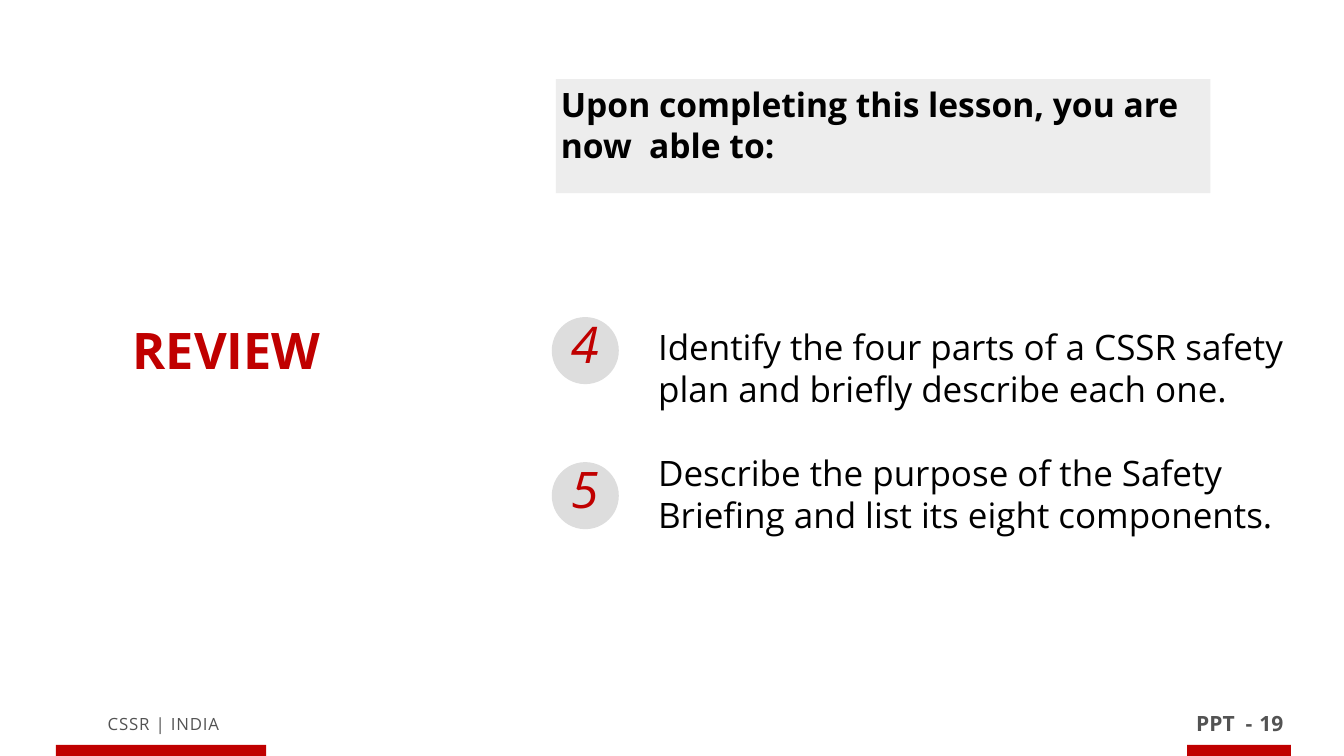
from pptx import Presentation
from pptx.dml.color import RGBColor
from pptx.enum.shapes import MSO_SHAPE
from pptx.enum.text import MSO_ANCHOR, MSO_AUTO_SIZE, PP_ALIGN
from pptx.util import Cm, Pt

RECTANGLE, OVAL = MSO_SHAPE.RECTANGLE, MSO_SHAPE.OVAL
LEFT, CENTER = PP_ALIGN.LEFT, PP_ALIGN.CENTER
TOP = MSO_ANCHOR.TOP
FIT_SHAPE = MSO_AUTO_SIZE.SHAPE_TO_FIT_TEXT

RED = RGBColor(0xC0, 0x00, 0x00)
BLACK = RGBColor(0x00, 0x00, 0x00)
FOOTER_GRAY = RGBColor(0x53, 0x53, 0x53)
CIRCLE_GRAY = RGBColor(0xDD, 0xDD, 0xDD)
BANNER_GRAY = RGBColor(0xED, 0xED, 0xED)
FONT = "Open Sans"

presentation = Presentation()
presentation.slide_width = Cm(67.74)
presentation.slide_height = Cm(38.1)
slide = presentation.slides.add_slide(presentation.slide_layouts[6])


def add_block(shapes, kind, left, top, width, height, fill):
    shape = shapes.add_shape(kind, Cm(left), Cm(top), Cm(width), Cm(height))
    shape.shadow.inherit = False
    shape.fill.solid()
    shape.fill.fore_color.rgb = fill
    shape.line.fill.background()
    return shape


def write(shape, texts, size, color, bold=False, italic=False,
          align=LEFT, wrap=True, gap=0, inset=0.23):
    frame = shape.text_frame
    frame.word_wrap = wrap
    if not wrap:
        frame.auto_size = FIT_SHAPE
    frame.vertical_anchor = TOP
    frame.margin_left = frame.margin_right = Cm(inset)
    frame.margin_top = frame.margin_bottom = Cm(inset)
    for index, text in enumerate(texts):
        paragraph = frame.add_paragraph() if index else frame.paragraphs[0]
        paragraph.alignment = align
        if index:
            paragraph.space_before = Pt(gap)
        run = paragraph.add_run()
        run.text = text
        font = run.font
        font.name, font.size = FONT, Pt(size)
        font.bold, font.italic = bold, italic
        font.color.rgb = color


# Footer: labels, page number and red bars
footer = slide.shapes.add_textbox(Cm(1.79), Cm(35.76), Cm(12.9), Cm(1.47))
write(footer, ["CSSR | INDIA"], 24, FOOTER_GRAY, align=CENTER)
footer.text_frame.paragraphs[0].runs[0].font._element.set("spc", "120")

for text, left, width in (("PPT  -", 59.81, 3.8), ("19", 63.08, 2)):
    label = slide.shapes.add_textbox(Cm(left), Cm(35.59), Cm(width), Cm(1.73))
    write(label, [text], 30, FOOTER_GRAY, bold=True, align=CENTER, wrap=False)

for left, width in ((2.82, 10.59), (59.84, 5.23)):
    add_block(slide.shapes, RECTANGLE, left, 37.54, width, 0.56, RED)

# Title
title = slide.shapes.add_textbox(Cm(6.46), Cm(15.85), Cm(10), Cm(3.5))
write(title, ["REVIEW"], 72, RED, bold=True, wrap=False)

# Objectives, one line's height apart
objectives = slide.shapes.add_textbox(Cm(32.94), Cm(16.18), Cm(32.23), Cm(12.42))
write(objectives,
      ["Identify the four parts of a CSSR safety plan and briefly describe each one.",
       "Describe the purpose of the Safety Briefing and list its eight components."],
      50, BLACK, gap=60)

# Numbered circles
for number, top in (("4", 15.98), ("5", 23.29)):
    badge = slide.shapes.add_group_shape()
    add_block(badge.shapes, OVAL, 27.81, top, 3.38, 3.38, CIRCLE_GRAY)
    digit = badge.shapes.add_textbox(Cm(28.55), Cm(top - 0.41), Cm(2.29), Cm(4.67))
    write(digit, [number], 72, RED, italic=True)

# Lead-in banner
banner = add_block(slide.shapes, RECTANGLE, 28.02, 3.99, 32.99, 5.74, BANNER_GRAY)
write(banner, ["Upon completing this lesson, you are now  able to:"], 48, BLACK,
      bold=True, inset=0.25)

presentation.save("out.pptx")
